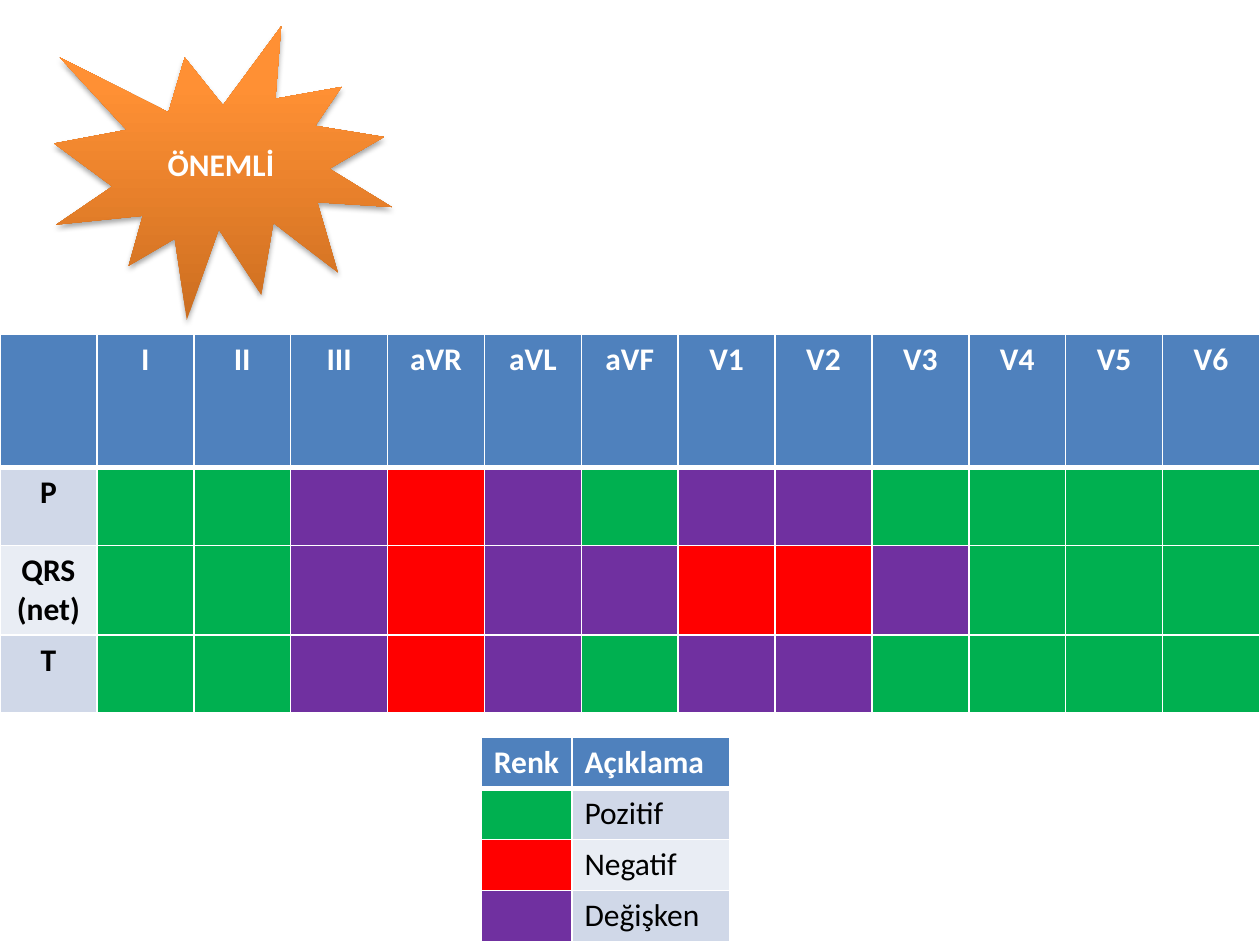
from copy import deepcopy

from lxml.etree import SubElement
from pptx import Presentation
from pptx.dml.color import RGBColor
from pptx.enum.shapes import MSO_SHAPE as Preset
from pptx.enum.text import MSO_ANCHOR as Anchor, PP_ALIGN as Align
from pptx.oxml import parse_xml
from pptx.oxml.ns import nsdecls, qn
from pptx.util import Inches, Pt

COLORS = {
    "header": "4F81BD", "band_dark": "D0D8E8", "band_light": "E9EDF4",
    "white": "FFFFFF", "black": "000000",
    "positive": "00B050", "negative": "FF0000", "variable": "7030A0",
}
BURST_STOPS = [(0, "CC6E20"), (0.8, "FF9034"), (1, "FF9136")]
BANDS = ["band_dark", "band_light"]
CODES = {"+": "positive", "-": "negative", "~": "variable"}
LEADS = ["I", "II", "III", "aVR", "aVL", "aVF", "V1", "V2", "V3", "V4", "V5", "V6"]
WAVES = {  # one code per lead
    "P": "++~-~+~~++++",
    "QRS (net)": "++~-~~--~+++",
    "T": "++~-~+~~++++",
}
LEGEND = {"+": "Pozitif", "-": "Negatif", "~": "Değişken"}
WIDTH, HEIGHT = 10, 7.5


def write_text(frame, text, color="black", bold=False, align=Align.LEFT, size=18):
    paragraph = frame.paragraphs[0]
    paragraph.alignment = align
    run = paragraph.add_run()
    run.text = text
    run.font.name = "Calibri"
    run.font.size = Pt(size)
    run.font.bold = bold
    run.font.color.rgb = RGBColor.from_string(COLORS[color])


def set_borders(cell, top, bottom):
    """Draw white borders; top and bottom are widths in points."""
    properties = cell._tc.get_or_add_tcPr()
    widths = {"lnL": 1, "lnR": 1, "lnT": top, "lnB": bottom}
    for position, (side, width) in enumerate(widths.items()):
        line = properties.makeelement(qn(f"a:{side}"), {"w": str(Pt(width))})
        fill = SubElement(line, qn("a:solidFill"))
        SubElement(fill, qn("a:srgbClr"), val=COLORS["white"])
        properties.insert(position, line)


def add_grid(slide, box, column_widths, row_heights, cells, align):
    """Add a table; cells holds rows of (text, fill, text color, bold)."""
    shape = slide.shapes.add_table(
        len(row_heights), len(column_widths), *map(Inches, box))
    table = shape.table
    for column, width in zip(table.columns, column_widths):
        column.width = Inches(width)
    for row, height in zip(table.rows, row_heights):
        row.height = Inches(height)
    for r, row in enumerate(cells):
        for c, (text, fill, color, bold) in enumerate(row):
            cell = table.cell(r, c)
            cell.fill.solid()
            cell.fill.fore_color.rgb = RGBColor.from_string(COLORS[fill])
            set_borders(cell, top=3 if r == 1 else 1, bottom=3 if r == 0 else 1)
            if text:
                write_text(cell.text_frame, text, color=color, bold=bold, align=align)


def header_row(labels):
    return [(label, "header", "white", True) for label in labels]


def swatch(code):
    return "", CODES[code], "black", False


def add_lead_table(slide, box):
    left, top, width, height = box
    columns = len(LEADS) + 1
    cells = [header_row(["", *LEADS])]
    for index, (wave, codes) in enumerate(WAVES.items()):
        label = (wave, BANDS[index % 2], "black", True)
        cells.append([label, *map(swatch, codes)])
    header = 1.06
    body = [(height - header) / len(WAVES)] * len(WAVES)
    add_grid(slide, box, [width / columns] * columns, [header, *body],
             cells, Align.CENTER)


def add_legend(slide, box):
    left, top, width, height = box
    cells = [header_row(["Renk", "Açıklama"])]
    for index, (code, meaning) in enumerate(LEGEND.items()):
        cells.append([swatch(code), (meaning, BANDS[index % 2], "black", False)])
    swatch_width = 0.72
    add_grid(slide, box, [swatch_width, width - swatch_width],
             [height / len(cells)] * len(cells), cells, Align.LEFT)


def add_burst(slide, box, text):
    shape = slide.shapes.add_shape(Preset.EXPLOSION1, *map(Inches, box))
    shape.line.fill.background()
    shape.fill.gradient()
    shape.fill.gradient_angle = 90
    stop_list = shape._element.spPr.find(f".//{qn('a:gsLst')}")
    stop_list.append(deepcopy(stop_list[-1]))
    for stop, (position, color) in zip(shape.fill.gradient_stops, BURST_STOPS):
        stop.position = position
        stop.color.rgb = RGBColor.from_string(color)
    shape._element.spPr.append(parse_xml(
        f'<a:effectLst {nsdecls("a")}>'
        f'<a:outerShdw blurRad="{Pt(3.1)}" dist="{Pt(1.8)}" dir="5400000" rotWithShape="0">'
        f'<a:srgbClr val="{COLORS["black"]}"><a:alpha val="35000"/></a:srgbClr>'
        '</a:outerShdw></a:effectLst>'))
    shape.text_frame.word_wrap = True
    shape.text_frame.vertical_anchor = Anchor.MIDDLE
    write_text(shape.text_frame, text, color="white", bold=True, align=Align.CENTER)


def main():
    presentation = Presentation()
    presentation.slide_width = Inches(WIDTH)
    presentation.slide_height = Inches(HEIGHT)
    slide = presentation.slides.add_slide(presentation.slide_layouts[6])
    add_lead_table(slide, (0, 2.65, WIDTH, 2.92))
    add_legend(slide, (3.82, 5.85, 1.97, 1.62))
    add_burst(slide, (0.43, 0.21, 2.68, 2.33), "ÖNEMLİ")
    presentation.save("out.pptx")


if __name__ == "__main__":
    main()
